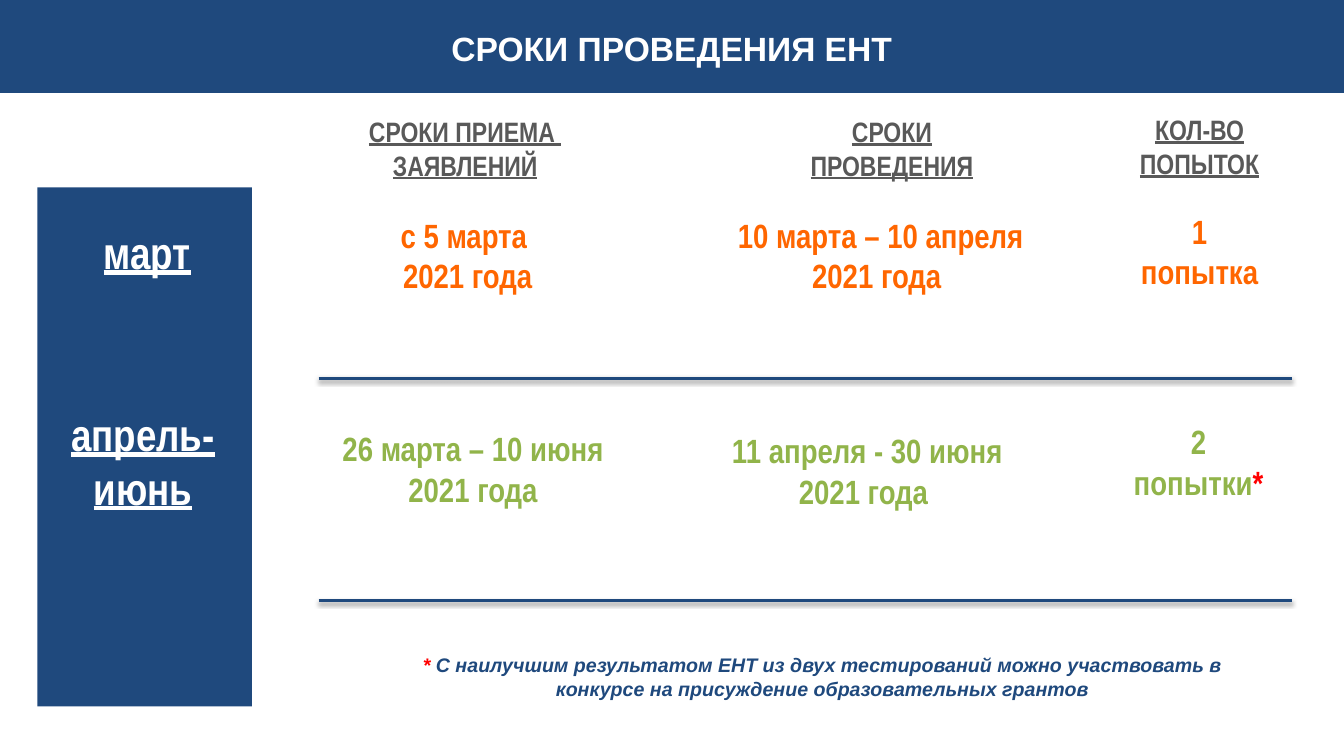
from lxml import etree
from pptx import Presentation
from pptx.dml.color import RGBColor
from pptx.enum.shapes import MSO_CONNECTOR, MSO_SHAPE
from pptx.enum.text import MSO_ANCHOR, PP_ALIGN
from pptx.oxml.ns import qn
from pptx.util import Cm, Pt

RECT = MSO_SHAPE.RECTANGLE
STRAIGHT = MSO_CONNECTOR.STRAIGHT
CENTER = PP_ALIGN.CENTER
MIDDLE = MSO_ANCHOR.MIDDLE

NAVY, WHITE, GREY = "1F497D", "FFFFFF", "595959"
ORANGE, GREEN, RED = "FF6600", "91B44A", "FF0000"
NARROW, REGULAR = "Arial Narrow", "Arial"

# Each column: (left, top, width, paragraphs) for its heading, March and April-June,
# measured from the corner of the schedule.
COLUMNS = [
    [(0.14, 0.07, 9.17, ["СРОКИ ПРИЕМА ", "ЗАЯВЛЕНИЙ"]),
     (0.39, 2.58, 8.79, ["с 5 марта ", "2021 года"]),
     (0.67, 7.97, 8.69, ["26 марта – 10 июня ", "2021 года "])],
    [(12.76, 0.07, 5.44, ["СРОКИ ПРОВЕДЕНИЯ"]),
     (11.06, 2.58, 8.26, ["10 марта – 10 апреля 2021 года "]),
     (11.06, 8.02, 7.59, ["11 апреля - 30 июня 2021 года "])],
    [(20.51, 0.02, 5.44, ["КОЛ-ВО ПОПЫТОК"]),
     (21.3, 2.48, 3.86, ["1 попытка"]),
     (21.3, 7.79, 3.81, ["2 попытки*"])],
]
# Height, size, colour and underline of the heading and of the two periods
ROWS = [(1.96, 20, GREY, True), (2.31, 24, ORANGE, None), (2.31, 24, GREEN, None)]
RULES = [6.83, 12.44]


def rgb(value):
    return RGBColor.from_string(value)


def add_block(slide, box, color):
    sp = slide.shapes.add_shape(RECT, *map(Cm, box))
    sp.shadow.inherit = False
    sp.fill.solid()
    sp.fill.fore_color.rgb = rgb(color)
    sp.line.fill.background()
    return sp


def write(sp, paragraphs, size, color, font=NARROW, underline=None, italic=None, wrap=True):
    """Fill a shape with centred bold text; an asterisk is set in red."""
    tf = sp.text_frame
    tf.word_wrap = wrap
    for i, text in enumerate(paragraphs):
        p = tf.paragraphs[0] if i == 0 else tf.add_paragraph()
        p.alignment = CENTER
        before, star, after = text.partition("*")
        for part, part_color in ((before, color), (star, RED), (after, color)):
            if not part:
                continue
            r = p.add_run()
            r.text = part
            r.font.name, r.font.size = font, Pt(size)
            r.font.bold, r.font.italic, r.font.underline = True, italic, underline
            r.font.color.rgb = rgb(part_color)
    return tf


def add_text(slide, box, *args, **style):
    return write(slide.shapes.add_textbox(*map(Cm, box)), *args, **style)


def add_rule(slide, x1, x2, y):
    """Draw a horizontal line with a soft shadow below it."""
    line = slide.shapes.add_connector(STRAIGHT, Cm(x1), Cm(y), Cm(x2), Cm(y))
    line.line.color.rgb = rgb(NAVY)
    line.line.width = Pt(2)
    effects = etree.SubElement(line._element.spPr, qn("a:effectLst"))
    shadow = etree.SubElement(effects, qn("a:outerShdw"), blurRad=str(Pt(3.1)),
                              dist=str(Pt(1.6)), dir="5400000", rotWithShape="0")
    black = etree.SubElement(shadow, qn("a:srgbClr"), val="000000")
    etree.SubElement(black, qn("a:alpha"), val="38000")


def add_banner(slide, left, top, width, height):
    add_block(slide, (left, top, width, height), NAVY)
    tf = add_text(slide, (left + 0.99, top + 0.61, width - 1.99, 1.19),
                  ["СРОКИ ПРОВЕДЕНИЯ ЕНТ"], 24, WHITE, font=REGULAR)
    tf.vertical_anchor = MIDDLE


def add_sidebar(slide, left, top, width, height):
    add_block(slide, (left, top, width, height), NAVY)
    labels = [((1.4, 0.82, 2.74, 1.63), ["март"]),
              ((0.58, 5.41, 4.17, 3), ["апрель-", "июнь"])]
    for (dx, dy, w, h), lines in labels:
        add_text(slide, (left + dx, top + dy, w, h), lines, 32, WHITE,
                 underline=True, wrap=False)


def add_schedule(slide, left, top, width):
    for column in COLUMNS:
        for (dx, dy, w, lines), (h, size, color, underline) in zip(column, ROWS):
            add_text(slide, (left + dx, top + dy, w, h), lines, size, color,
                     underline=underline)
    for dy in RULES:
        add_rule(slide, left + 1.03, left + width, top + dy)


def add_footnote(slide, *box):
    note = ("* С наилучшим результатом ЕНТ из двух тестирований можно участвовать "
            "в конкурсе на присуждение образовательных грантов")
    add_text(slide, box, [note], 14, NAVY, font=REGULAR, italic=True)


def main():
    prs = Presentation()
    prs.slide_width, prs.slide_height = Cm(33.87), Cm(19.05)
    slide = prs.slides.add_slide(prs.slide_layouts[6])
    add_banner(slide, 0, 0, 33.87, 2.34)
    add_sidebar(slide, 0.94, 4.72, 5.41, 13.08)
    add_schedule(slide, 7, 2.7, 25.56)
    add_footnote(slide, 9.53, 16.33, 22.4, 1.45)
    prs.save("out.pptx")


if __name__ == "__main__":
    main()
